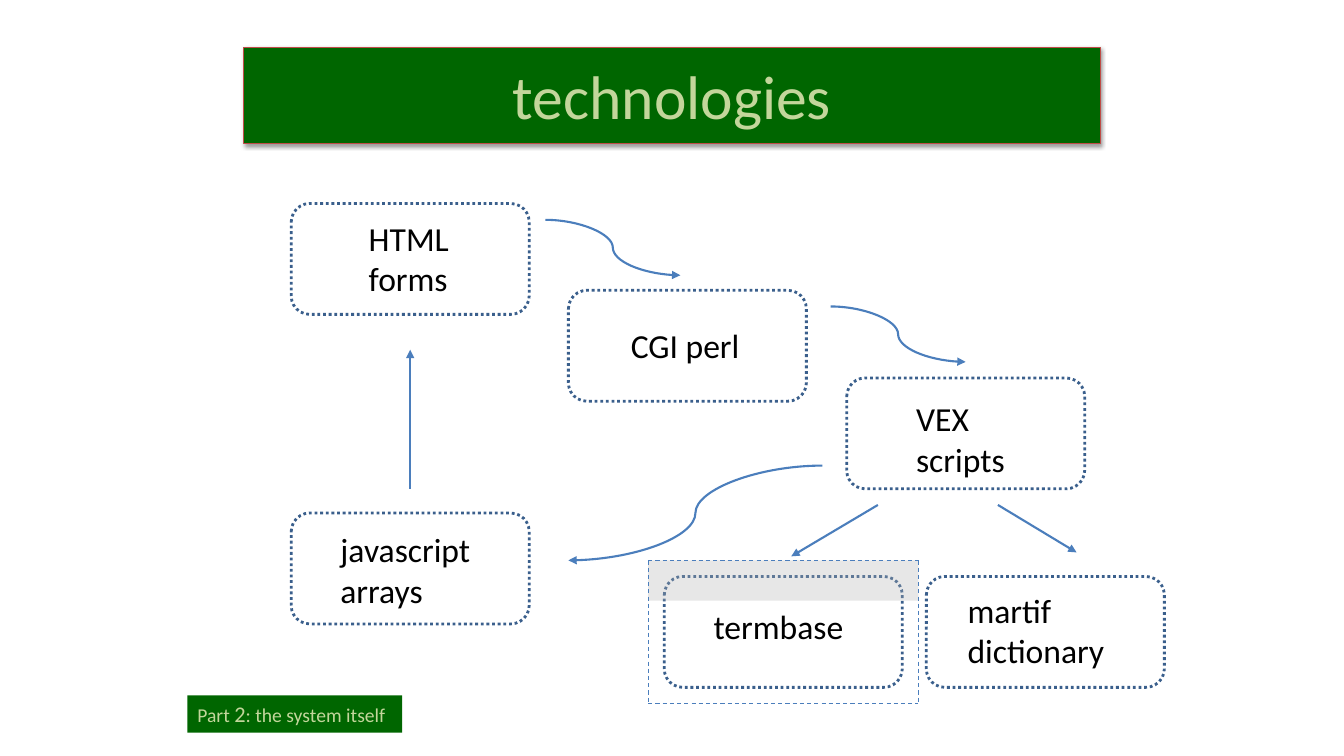
import pptx
import pptx.dml.color
import pptx.enum.dml
import pptx.enum.shapes
import pptx.enum.text
import pptx.oxml
import pptx.oxml.ns
import pptx.util

Pt = pptx.util.Pt
SHAPES = pptx.enum.shapes.MSO_SHAPE
CONNECTORS = pptx.enum.shapes.MSO_CONNECTOR
DASHES = pptx.enum.dml.MSO_LINE
ANCHORS = pptx.enum.text.MSO_ANCHOR

GREEN, PALE_GREEN = "006600", "C3D69B"
ARROW_BLUE, NODE_BLUE = "4B7EBC", "3A5F8C"
NODE_WIDTH, NODE_HEIGHT = 170, 79.2

# text, node left and top, label offset inside the node, label width and height
NODES = [
    ("VEX scripts", 604.8, 270, 42.5, 10.8, 96.5, 65.5),
    ("HTML forms", 208, 145.4, 48.3, 6.5, 73.4, 65.5),
    ("CGI perl", 406, 207.4, 37.5, 20.9, 96.5, 36),
    ("javascript arrays", 208, 366.5, 28.1, 7.9, 113, 65.5),
    ("martif dictionary", 661.7, 411.8, 22.3, 5.8, 130.3, 65.5),
    ("termbase", 474.5, 411.8, 28.1, 17.3, 108, 36),
]
CURVED_ARROWS = [
    (587.5, 332.6, 406, 400.3),
    (389.5, 157, 486, 196.6),
    (593.3, 218.9, 689.8, 258.5),
]
STRAIGHT_ARROWS = [
    (293, 349.2, 293, 249.8),
    (712.8, 360.7, 769, 394.6),
    (627.1, 360.7, 565.2, 397.4),
]
FRAME_LEFT, FRAME_TOP, FRAME_RIGHT, FRAME_BOTTOM = 463, 400.3, 656, 502.6


def color(value):
    return pptx.dml.color.RGBColor.from_string(value)


def add_xml(parent, tag, content=""):
    """Append a drawing element, given its tag with attributes and its content."""
    name = tag.split()[0]
    namespace = pptx.oxml.ns.nsdecls("a")
    element = pptx.oxml.parse_xml(f"<a:{tag} {namespace}>{content}</a:{name}>")
    parent.append(element)


def set_fill(shape, value):
    shape.fill.solid()
    shape.fill.fore_color.rgb = color(value)


def set_line(line, value, width, dash=None):
    line.color.rgb = color(value)
    line.width = Pt(width)
    if dash is not None:
        line.dash_style = dash


def set_font(font, size, value):
    font.name = "Calibri"
    font.size = Pt(size)
    font.color.rgb = color(value)


def add_box(slide, kind, *bounds):
    """Add a preset shape without shadow, fill or line."""
    shape = slide.shapes.add_shape(kind, *map(Pt, bounds))
    shape.shadow.inherit = False
    shape.fill.background()
    shape.line.fill.background()
    return shape


def add_line(slide, kind, ends, width, dash=None, arrow=False):
    connector = slide.shapes.add_connector(kind, *map(Pt, ends))
    set_line(connector.line, ARROW_BLUE, width, dash)
    if arrow:
        add_xml(connector.line._get_or_add_ln(), 'tailEnd type="triangle"')
    add_xml(connector._element.spPr, "effectLst")


def add_title(slide, text):
    title = slide.shapes.title
    title.left, title.top, title.width, title.height = map(Pt, (174.2, 33.8, 612, 68.4))
    set_fill(title, GREEN)
    set_line(title.line, "BF4C48", 0.75)
    shade = '<a:srgbClr val="000000"><a:alpha val="38000"/></a:srgbClr>'
    shadow = (f'<a:outerShdw blurRad="{Pt(3.1)}" dist="{Pt(1.6)}" dir="5400000" '
              f'rotWithShape="0">{shade}</a:outerShdw>')
    add_xml(title._element.spPr, "effectLst", shadow)
    frame = title.text_frame
    frame.text = text
    frame.auto_size = pptx.enum.text.MSO_AUTO_SIZE.NONE
    frame.vertical_anchor = ANCHORS.MIDDLE
    paragraph = frame.paragraphs[0]
    paragraph.alignment = pptx.enum.text.PP_ALIGN.CENTER
    set_font(paragraph.font, 44, PALE_GREEN)


def add_node(slide, text, left, top, offset_x, offset_y, width, height):
    """Add a dotted rounded box with its label."""
    node = add_box(slide, SHAPES.ROUNDED_RECTANGLE, left, top, NODE_WIDTH, NODE_HEIGHT)
    set_line(node.line, NODE_BLUE, 2, DASHES.ROUND_DOT)
    bounds = (left + offset_x, top + offset_y, width, height)
    label = slide.shapes.add_textbox(*map(Pt, bounds))
    label.text_frame.word_wrap = True
    label.text_frame.text = text
    set_font(label.text_frame.paragraphs[0].font, 24, "000000")


def add_termbase_frame(slide):
    width = FRAME_RIGHT - FRAME_LEFT
    band = add_box(slide, SHAPES.RECTANGLE, FRAME_LEFT, FRAME_TOP, width, 28.8)
    set_fill(band, "B2B2B2")
    fill_color = band._element.spPr.find(".//" + pptx.oxml.ns.qn("a:srgbClr"))
    add_xml(fill_color, 'alpha val="30000"')
    for y in (FRAME_TOP, FRAME_BOTTOM):
        add_line(slide, CONNECTORS.STRAIGHT, (FRAME_LEFT, y, FRAME_RIGHT, y), 0.75, DASHES.DASH)
    for x in (FRAME_LEFT, FRAME_RIGHT):
        add_line(slide, CONNECTORS.STRAIGHT, (x, FRAME_TOP, x, FRAME_BOTTOM), 0.75, DASHES.DASH)


def add_part_label(slide):
    label = add_box(slide, SHAPES.RECTANGLE, 133.9, 496.8, 153.4, 26.6)
    set_fill(label, GREEN)
    label.text_frame.vertical_anchor = ANCHORS.TOP
    paragraph = label.text_frame.paragraphs[0]
    paragraph.alignment = pptx.enum.text.PP_ALIGN.LEFT
    for text, size in (("Part ", 14), ("2", 16), (": the system itself", 14)):
        run = paragraph.add_run()
        run.text = text
        set_font(run.font, size, PALE_GREEN)


def main():
    presentation = pptx.Presentation()
    presentation.slide_width, presentation.slide_height = Pt(960), Pt(540)
    slide = presentation.slides.add_slide(presentation.slide_layouts.get_by_name("Title Only"))
    add_title(slide, "technologies")
    for node in NODES:
        add_node(slide, *node)
    for ends in CURVED_ARROWS:
        add_line(slide, CONNECTORS.CURVE, ends, 1.5, arrow=True)
    for ends in STRAIGHT_ARROWS:
        add_line(slide, CONNECTORS.STRAIGHT, ends, 1.5, arrow=True)
    add_termbase_frame(slide)
    add_part_label(slide)
    presentation.save("out.pptx")


if __name__ == "__main__":
    main()
